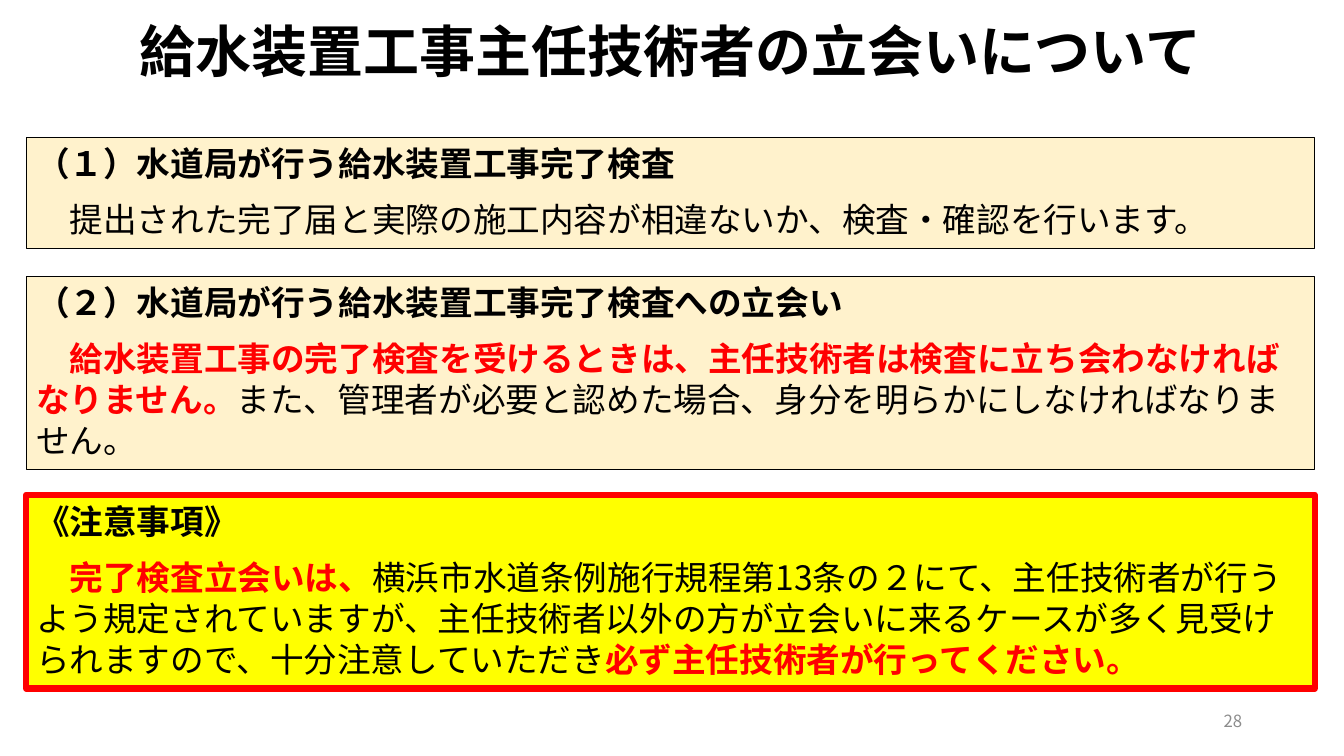
from pptx import Presentation
from pptx.dml.color import RGBColor
from pptx.enum import shapes, text
from pptx.oxml import ns
from pptx.util import Inches, Pt
from lxml import etree

FONT = "Noto Sans CJK JP"
BLACK = RGBColor(0x00, 0x00, 0x00)
RED = RGBColor(0xFF, 0x00, 0x00)
GRAY = RGBColor(0x8C, 0x8C, 0x8C)
CREAM = RGBColor(0xFF, 0xF2, 0xCC)
YELLOW = RGBColor(0xFF, 0xFF, 0x00)


def add_run(paragraph, words, size=24, color=BLACK, bold=False):
    run = paragraph.add_run()
    run.text = words
    run.font.size = Pt(size)
    run.font.name = FONT
    run.font.bold = bold
    run.font.color.rgb = color
    east_asian = etree.SubElement(run.font._element, ns.qn("a:ea"))
    east_asian.set("typeface", FONT)


def add_title(slide, left, top, width, height, words):
    title = slide.shapes.title
    title.left, title.top = Inches(left), Inches(top)
    title.width, title.height = Inches(width), Inches(height)
    frame = title.text_frame
    frame.word_wrap = True
    frame.auto_size = text.MSO_AUTO_SIZE.NONE
    frame.vertical_anchor = text.MSO_ANCHOR.TOP
    paragraph = frame.paragraphs[0]
    paragraph.alignment = text.PP_ALIGN.CENTER
    paragraph.line_spacing = Pt(48)
    add_run(paragraph, words, size=40, bold=True)


def add_section(slide, left, top, width, height, heading, body,
                fill=CREAM, line=BLACK, line_width=0.75):
    """Place a framed box with a bold heading and one paragraph of mixed runs."""
    box = slide.shapes.add_shape(shapes.MSO_SHAPE.RECTANGLE, Inches(left),
                                 Inches(top), Inches(width), Inches(height))
    box.shadow.inherit = False
    box.fill.solid()
    box.fill.fore_color.rgb = fill
    box.line.color.rgb = line
    box.line.width = Pt(line_width)
    frame = box.text_frame
    frame.word_wrap = True
    frame.vertical_anchor = text.MSO_ANCHOR.TOP
    heading_paragraph, body_paragraph = frame.paragraphs[0], frame.add_paragraph()
    for paragraph in (heading_paragraph, body_paragraph):
        paragraph.alignment = text.PP_ALIGN.LEFT
        paragraph.line_spacing = Pt(29.2)
    body_paragraph.space_before = Pt(11)
    add_run(heading_paragraph, heading, bold=True)
    for words, emphasis in body:
        add_run(body_paragraph, words, color=RED if emphasis else BLACK,
                bold=emphasis)


def add_page_number(slide, left, top, width, height, number):
    box = slide.shapes.add_textbox(Inches(left), Inches(top),
                                   Inches(width), Inches(height))
    frame = box.text_frame
    frame.word_wrap = True
    frame.vertical_anchor = text.MSO_ANCHOR.MIDDLE
    paragraph = frame.paragraphs[0]
    paragraph.alignment = text.PP_ALIGN.RIGHT
    add_run(paragraph, number, size=12, color=GRAY)


def main():
    presentation = Presentation()
    presentation.slide_width = Inches(13.33)
    presentation.slide_height = Inches(7.5)
    slide = presentation.slides.add_slide(presentation.slide_layouts[5])

    add_title(slide, 0.18, 0.11, 12.94, 1, "給水装置工事主任技術者の立会いについて")

    # Inspection and attendance rules
    left, width = 0.26, 12.78
    add_section(slide, left, 1.36, width, 1.11,
                "（１）水道局が行う給水装置工事完了検査",
                [("　提出された完了届と実際の施工内容が相違ないか、検査・確認を行います。", False)])
    add_section(slide, left, 2.74, width, 1.92,
                "（２）水道局が行う給水装置工事完了検査への立会い",
                [("　給水装置工事の完了検査を受けるときは、主任技術者は検査に立ち会わなければなりません。", True),
                 ("また、管理者が必要と認めた場合、身分を明らかにしなければなりません。", False)])

    # Warning
    add_section(slide, left, 4.91, width, 1.92, "《注意事項》",
                [("　完了検査立会いは、", True),
                 ("横浜市水道条例施行規程第13条の２にて、主任技術者が行うよう規定されていますが、"
                  "主任技術者以外の方が立会いに来るケースが多く見受けられますので、十分注意していただき", False),
                 ("必ず主任技術者が行ってください。", True)],
                fill=YELLOW, line=RED, line_width=4.5)

    add_page_number(slide, 9.42, 6.95, 3, 0.4, "28")
    presentation.save("out.pptx")


if __name__ == "__main__":
    main()
